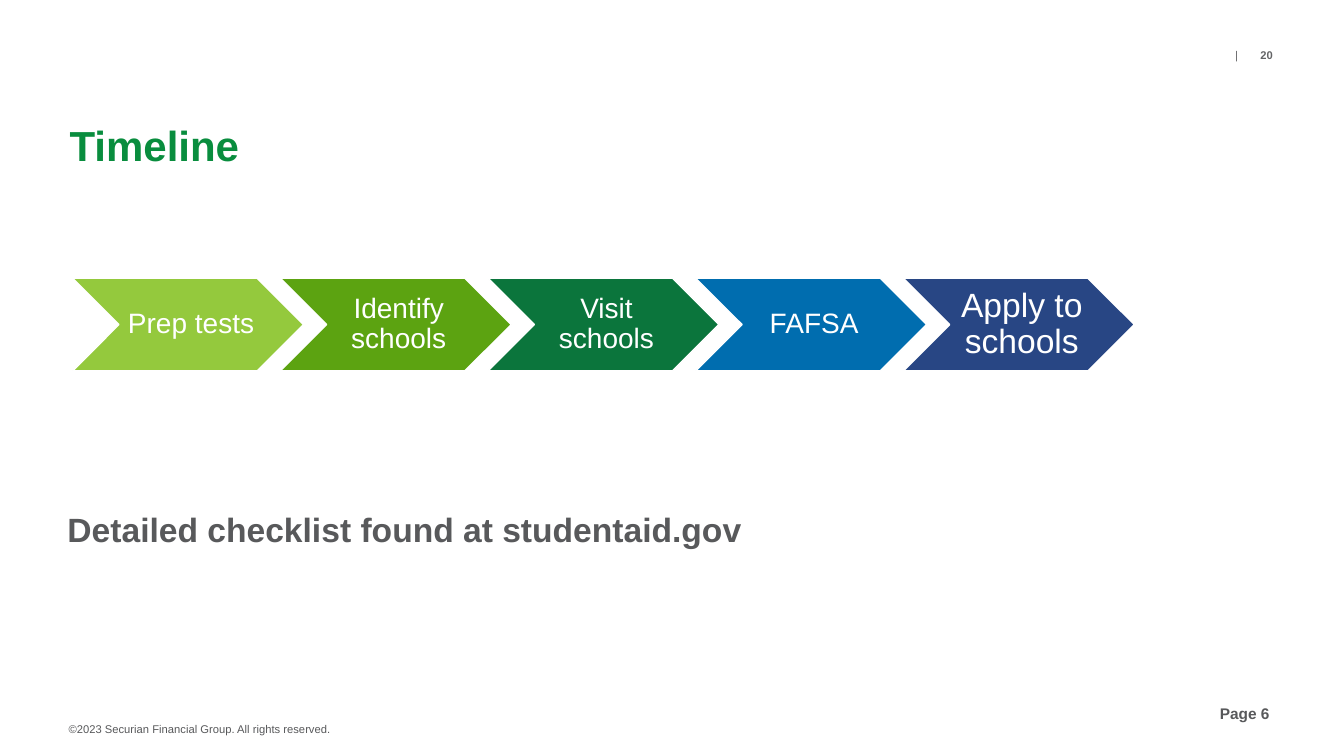
from pptx import Presentation, util as u
from pptx.dml.color import RGBColor
from pptx.enum import shapes, text
from lxml import etree

PX = 9144  # EMU in one px, 100 px to the inch
WHITE = RGBColor(0xFF, 0xFF, 0xFF)
GREEN = RGBColor(0x09, 0x8D, 0x3E)
GRAY = RGBColor(0x58, 0x59, 0x5B)
SLATE = RGBColor(0x63, 0x64, 0x66)
LIME = RGBColor(0x94, 0xC9, 0x3D)
LEAF = RGBColor(0x5C, 0xA3, 0x11)
PINE = RGBColor(0x0B, 0x75, 0x3C)
BLUE = RGBColor(0x00, 0x6D, 0xAF)
NAVY = RGBColor(0x28, 0x46, 0x84)
TOP, MID, LOW = (text.MSO_ANCHOR.TOP, text.MSO_ANCHOR.MIDDLE,
                 text.MSO_ANCHOR.BOTTOM)
LEFT, MIDDLE = text.PP_ALIGN.LEFT, text.PP_ALIGN.CENTER
NS = "{http://schemas.openxmlformats.org/drawingml/2006/main}"

# Label, fill, text size, insets
STEPS = [
    ("Prep tests", LIME, 20, (8, 3, 2, 3)),
    ("Identify schools", LEAF, 20, (9, 3, 3, 3)),
    ("Visit schools", PINE, 20, (9, 3, 3, 3)),
    ("FAFSA", BLUE, 20, (9, 3, 3, 3)),
    ("Apply to schools", NAVY, 24, (10, 4, 4, 4)),
]


def px(*vals):
    return [u.Emu(v * PX) for v in vals]


def apply(obj, form):
    for key, val in form.items():
        setattr(obj, key, val)


def write(shape, words, size, color, bold=False, align=LEFT, anchor=TOP,
          pad=(0, 0, 0, 0), lead=0.9):
    """Fill a shape with one formatted paragraph."""
    frame = shape.text_frame
    sides = ("margin_left", "margin_top", "margin_right", "margin_bottom")
    apply(frame, dict(zip(sides, px(*pad)), word_wrap=True,
                      auto_size=text.MSO_AUTO_SIZE.NONE,
                      vertical_anchor=anchor))
    para = frame.paragraphs[0]
    apply(para, {"alignment": align, "line_spacing": lead})
    run = para.add_run()
    run.text = words
    apply(run.font, {"name": "Arial", "size": u.Pt(size), "bold": bold})
    run.font.color.rgb = color
    return para


def block(slide, kind, box, fill):
    shape = slide.shapes.add_shape(kind, *px(*box))
    shape.shadow.inherit = False
    shape.fill.solid()
    shape.fill.fore_color.rgb = fill
    shape.line.fill.background()
    return shape


def header(slide, x, y, w, h):
    """Slide number after a bar, set apart by a tab."""
    box = slide.shapes.add_textbox(*px(x, y, w, h))
    para = write(box, "|\t", 8, SLATE, pad=(0, 1, 0, 0), lead=1.0)
    tabs = etree.SubElement(para._p.get_or_add_pPr(), NS + "tabLst")
    etree.SubElement(tabs, NS + "tab", pos=str(25 * PX), algn="l")
    run = para.add_run()
    run.text = "20"
    apply(run.font, {"name": "Arial", "size": u.Pt(8), "bold": True})
    run.font.color.rgb = SLATE


def title(slide, x, y, w, h):
    shape = slide.shapes.title
    apply(shape, dict(zip(("left", "top", "width", "height"),
                          px(x, y, w, h))))
    write(shape, "Timeline", 30, GREEN, bold=True, lead=u.Pt(31))


def arrows(slide, x, y, w, h):
    """Chevrons that overlap by a tenth of their width."""
    step = w * 9 // 10
    for i, (label, fill, size, pad) in enumerate(STEPS):
        shape = block(slide, shapes.MSO_SHAPE.CHEVRON,
                      (x + i * step, y, w, h), fill)
        shape.line.color.rgb = WHITE
        shape.line.width = u.Pt(1)
        write(shape, label, size, WHITE, align=MIDDLE, anchor=MID, pad=pad)


def note(slide, x, y, w, h):
    box = slide.shapes.add_textbox(*px(x, y, w, h))
    write(box, "Detailed checklist found at studentaid.gov", 24, GRAY,
          bold=True, pad=(10, 5, 10, 5))


def footer(slide, x, y, w, h):
    bar = block(slide, shapes.MSO_SHAPE.RECTANGLE, (x, y, w, h), WHITE)
    write(bar, "©2023 Securian Financial Group. All rights reserved.", 8,
          GRAY, anchor=LOW)
    page = slide.shapes.add_textbox(*px(x + w - 78, y - 6, 95, 26))
    write(page, "Page 6", 11, GRAY, bold=True, align=MIDDLE,
          pad=(10, 5, 10, 5))


def main():
    deck = Presentation()
    deck.slide_width, deck.slide_height = px(1333, 750)
    slide = deck.slides.add_slide(deck.slide_layouts[5])
    header(slide, 1225, 47, 38, 15)
    title(slide, 69, 126, 462, 44)
    arrows(slide, 72, 276, 229, 92)
    note(slide, 57, 504, 698, 31)
    footer(slide, 68, 702, 1197, 28)
    deck.save("out.pptx")


if __name__ == "__main__":
    main()
